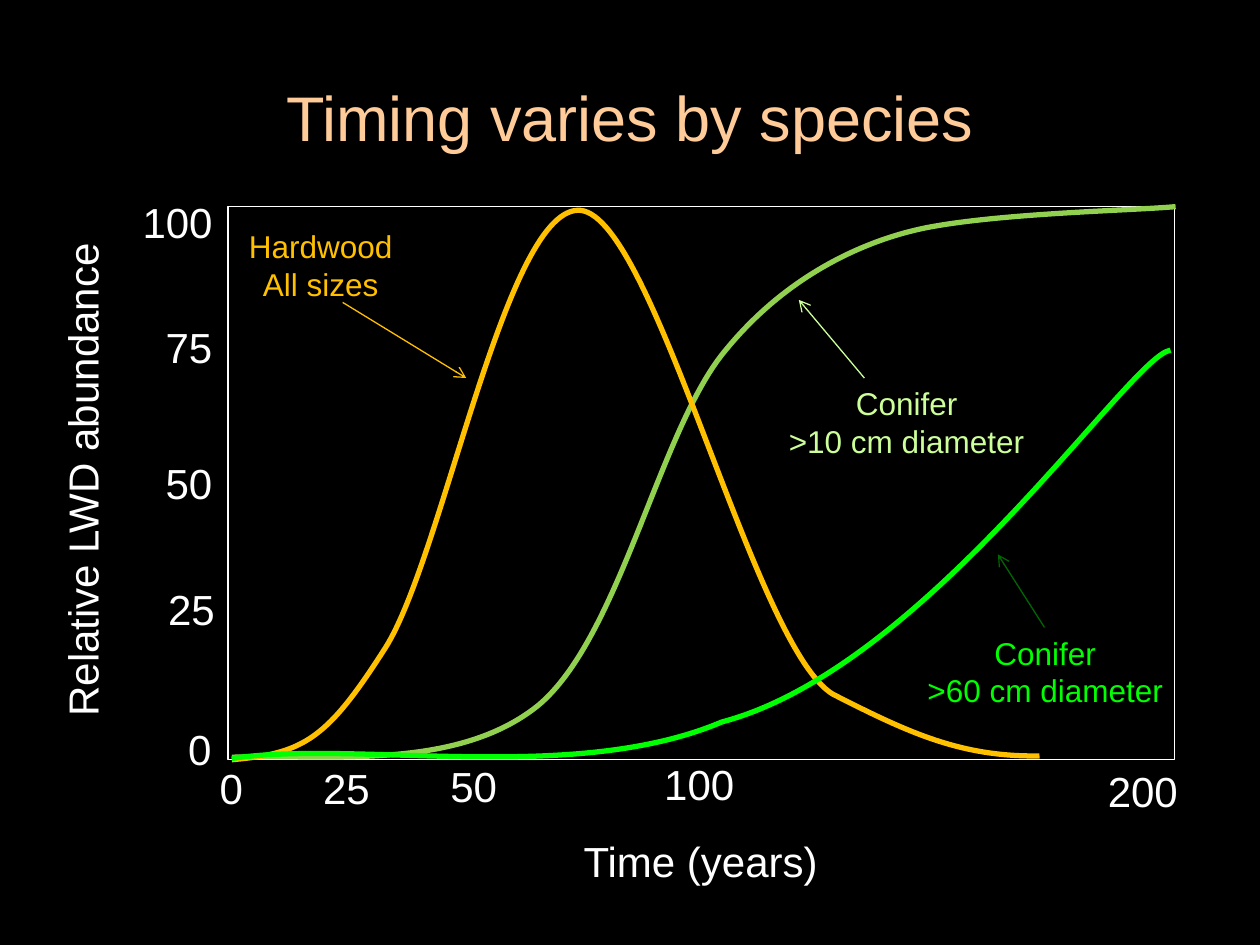
from pptx import Presentation
from pptx.dml.color import RGBColor
from pptx.enum.shapes import MSO_CONNECTOR as Connector, MSO_SHAPE as Shape
from pptx.enum.text import MSO_ANCHOR as Anchor, MSO_AUTO_SIZE as AutoSize, PP_ALIGN as Align
from pptx.oxml.ns import qn
from pptx.util import Inches, Pt
from lxml.etree import SubElement

THEME = {
    "font": "Arial",
    "background": "000000", "title": "FFCC99", "axis": "FFFFFF",
    "hardwood": "FFC000", "small_curve": "92D050", "small_label": "CCFF99",
    "large": "00FF00", "large_arrow": "006600",
    "title_size": 36, "axis_size": 24, "label_size": 18,
    "curve_width": 3, "thin_width": 0.75,
}

TITLE = "Timing varies by species"
PLOT = (1.81, 1.64, 7.51, 4.39)
AXIS_TITLES = [
    ("Time (years)", (4.52, 6.58, 2.08, 0.5), 0),
    ("Relative LWD abundance", (-1.34, 3.56, 3.98, 0.5), 270),
]
TICK_WIDTHS = {1: 0.39, 2: 0.58, 3: 0.76}
TICKS = [
    ("0", 1.64, 6), ("25", 2.46, 6), ("50", 3.47, 5.99), ("100", 5.17, 5.97), ("200", 8.69, 6.03),
    ("100", 1.03, 1.51), ("75", 1.21, 2.5), ("50", 1.21, 3.58), ("25", 1.23, 4.58), ("0", 1.39, 5.69),
]
CURVES = [
    ("small_curve", (1.84, 6.01), [
        ((2.57, 5.98), (3.61, 6.13), (4.27, 5.6)),
        ((4.92, 5.06), (5.23, 3.42), (5.75, 2.79)),
        ((6.26, 2.16), (6.9, 1.9), (7.34, 1.81)),
        ((7.94, 1.69), (9.02, 1.67), (9.33, 1.64))]),
    ("hardwood", (1.84, 6.03), [
        ((2.42, 5.98), (2.6, 5.86), (3.06, 5.14)),
        ((3.52, 4.41), (4.02, 1.61), (4.61, 1.67)),
        ((5.2, 1.74), (5.98, 5.13), (6.61, 5.51)),
        ((7.2, 5.81), (7.62, 6.01), (8.25, 6))]),
    ("large", (1.84, 6.02), [
        ((2.84, 5.87), (4.55, 6.23), (5.73, 5.73)),
        ((7.36, 5.3), (8.98, 2.81), (9.29, 2.78))]),
]
CURVE_LABELS = [
    ("Conifer\n>10 cm diameter", (6.15, 3, 2.09, 0.71), "small_label"),
    ("Conifer\n>60 cm diameter", (7.25, 4.98, 2.09, 0.71), "large"),
    ("Hardwood\nAll sizes", (1.87, 1.75, 1.35, 0.71), "hardwood"),
]
ARROWS = [
    ((6.86, 3), (6.34, 2.38), "small_label"),
    ((8.29, 4.98), (7.92, 4.4), "large_arrow"),
    ((2.72, 2.4), (3.7, 3), "hardwood"),
]


def color(name):
    return RGBColor.from_string(THEME[name])


def inches(values):
    return [Inches(value) for value in values]


def style_text(frame, size, color_name):
    for para in frame.paragraphs:
        para.alignment = Align.CENTER
        for span in para.runs:
            span.font.name = THEME["font"]
            span.font.size = Pt(THEME[size])
            span.font.color.rgb = color(color_name)


def style_line(shape, color_name, width):
    shape.line.color.rgb = color(color_name)
    shape.line.width = Pt(THEME[width])


def add_title(page):
    title = page.shapes.title
    title.left, title.top, title.width, title.height = inches((0.5, 0.3, 9, 1.25))
    title.text_frame.text = TITLE
    title.text_frame.vertical_anchor = Anchor.MIDDLE
    style_text(title.text_frame, "title_size", "title")


def add_label(page, text, place, size, color_name, rotation=0):
    box = page.shapes.add_textbox(*inches(place))
    box.rotation = rotation
    frame = box.text_frame
    frame.text = text
    frame.word_wrap = False
    frame.auto_size = AutoSize.SHAPE_TO_FIT_TEXT
    style_text(frame, size, color_name)


def add_plot_frame(page):
    frame = page.shapes.add_shape(Shape.RECTANGLE, *inches(PLOT))
    frame.shadow.inherit = False
    frame.fill.background()
    style_line(frame, "axis", "thin_width")


def add_curve(page, color_name, start, segments):
    builder = page.shapes.build_freeform(*inches(start))
    builder.add_line_segments([inches(segment[-1]) for segment in segments], close=False)
    curve = builder.convert_to_shape()
    curve.shadow.inherit = False
    curve.fill.background()
    style_line(curve, color_name, "curve_width")
    path = next(curve.element.iter(qn("a:path")))
    for line in path.findall(qn("a:lnTo")):
        path.remove(line)
    for segment in segments:
        bezier = SubElement(path, qn("a:cubicBezTo"))
        for x, y in map(inches, segment):
            SubElement(bezier, qn("a:pt"), x=str(x - curve.left), y=str(y - curve.top))


def add_arrow(page, start, end, color_name):
    arrow = page.shapes.add_connector(Connector.STRAIGHT, *inches(start + end))
    style_line(arrow, color_name, "thin_width")
    SubElement(arrow.line._get_or_add_ln(), qn("a:tailEnd"), type="arrow")
    SubElement(arrow.element.spPr, qn("a:effectLst"))


def main():
    deck = Presentation()
    deck.slide_width, deck.slide_height = Inches(10), Inches(7.5)
    page = deck.slides.add_slide(deck.slide_layouts[5])
    page.background.fill.solid()
    page.background.fill.fore_color.rgb = color("background")

    add_title(page)
    add_plot_frame(page)
    for text, place, rotation in AXIS_TITLES:
        add_label(page, text, place, "axis_size", "axis", rotation)
    for text, left, top in TICKS:
        add_label(page, text, (left, top, TICK_WIDTHS[len(text)], 0.5), "axis_size", "axis")
    for curve in CURVES:
        add_curve(page, *curve)
    for text, place, color_name in CURVE_LABELS:
        add_label(page, text, place, "label_size", color_name)
    for arrow in ARROWS:
        add_arrow(page, *arrow)
    deck.save("out.pptx")


if __name__ == "__main__":
    main()
